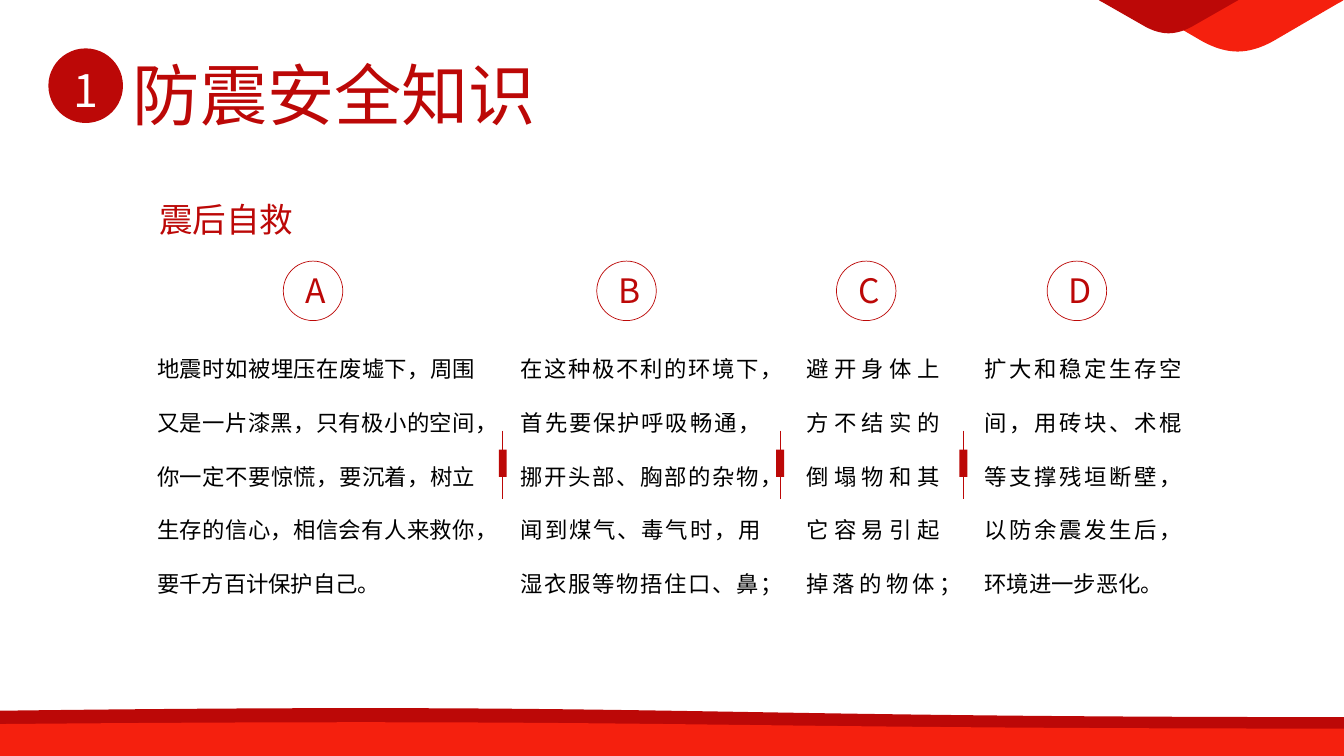
import pptx
import pptx.util
import pptx.dml.color
import pptx.enum.shapes
import pptx.enum.text
import pptx.oxml.ns
from lxml import etree

Cm = pptx.util.Cm
SHAPE = pptx.enum.shapes.MSO_SHAPE
ALIGN = pptx.enum.text.PP_ALIGN

# Content, lengths in cm
DARK_RED, BRIGHT_RED, BLACK, WHITE = "BC0807", "F5200E", "000000", "FFFFFF"
TITLE_FONT, LABEL_FONT = "Noto Sans CJK JP", "Noto Sans CJK SC"
NUMBER, TITLE, SUBTITLE = "1", "防震安全知识", "震后自救"
COLUMNS = [  # letter, ring left, text left, text width, text
    ("A", 7.14, 3.71, 8.53, "地震时如被埋压在废墟下，周围又是一片漆黑，只有极小的空间，"
     "你一定不要惊慌，要沉着，树立生存的信心，相信会有人来救你，要千方百计保护自己。"),
    ("B", 15.04, 12.88, 6.55, "在这种极不利的环境下，首先要保护呼吸畅通，挪开头部、胸部的杂物，"
     "闻到煤气、毒气时，用湿衣服等物捂住口、鼻；"),
    ("C", 21.08, 20.07, 3.86, "避开身体上方不结实的倒塌物和其它容易引起掉落的物体；"),
    ("D", 26.39, 24.56, 5.49, "扩大和稳定生存空间，用砖块、术棍等支撑残垣断壁，"
     "以防余震发生后，环境进一步恶化。"),
]
DIVIDERS = [12.67, 19.66, 24.28]
DIVIDER_TOP, DIVIDER_BOTTOM = 10.85, 12.57
BLOCK_TOP, BLOCK_WIDTH, BLOCK_HEIGHT = 11.33, 0.2, 0.69
RING_TOP, RING_SIZE = 6.58, 1.5
SLIDE_WIDTH, SLIDE_HEIGHT = 33.87, 19.05
BANDS = [(17.83, DARK_RED), (18.19, BRIGHT_RED)]  # top, colour
WEDGES = [(28.52, 5.34, 1.3, BRIGHT_RED), (27.69, 3.52, 0.84, DARK_RED)]
# Right half of a wedge as cubic curves, in fractions of its width and height
WEDGE_CURVES = [
    [(0.5, 1), (0.557, 1), (0.614, 0.92), (0.667, 0.8)],
    [(0.976, 0.06), (0.986, 0.04), (0.995, 0.02), (1, 0)],
]
CURVE_STEPS = 12


def colour(hex_string):
    return pptx.dml.color.RGBColor.from_string(hex_string)


def style(shape, fill=None, line=None):
    shape.shadow.inherit = False
    if fill:
        shape.fill.solid()
        shape.fill.fore_color.rgb = colour(fill)
    else:
        shape.fill.background()
    if line:
        shape.line.color.rgb = colour(line)
        shape.line.width = pptx.util.Pt(0.5)
    else:
        shape.line.fill.background()


def add_shape(shapes, kind, box, fill=None, line=None):
    shape = shapes.add_shape(kind, *(Cm(value) for value in box))
    style(shape, fill, line)
    return shape


def write(shape, text, size, font, hex_string, align=ALIGN.JUSTIFY, spacing=None):
    frame = shape.text_frame
    frame.word_wrap = True
    frame.text = text
    paragraph = frame.paragraphs[0]
    paragraph.alignment = align
    if spacing:
        paragraph.line_spacing = spacing
    run = paragraph.runs[0]
    run.font.size = pptx.util.Pt(size)
    run.font.color.rgb = colour(hex_string)
    run.font.name = font
    properties = run._r.get_or_add_rPr()
    properties.set("lang", "zh-CN")
    etree.SubElement(properties, pptx.oxml.ns.qn("a:ea"), typeface=font)


def add_text(shapes, box, *args, **options):
    write(shapes.add_textbox(*(Cm(value) for value in box)), *args, **options)


def add_wedge(shapes, left, width, height, fill):
    right_half = []
    for a, b, c, d in WEDGE_CURVES:
        for step in range(CURVE_STEPS + 1):
            t = step / CURVE_STEPS
            weights = ((1 - t) ** 3, 3 * t * (1 - t) ** 2, 3 * t * t * (1 - t), t ** 3)
            right_half.append(tuple(sum(w * p[axis] for w, p in zip(weights, (a, b, c, d)))
                                    for axis in (0, 1)))
    left_half = [(1 - x, y) for x, y in reversed(right_half)]
    points = [(Cm(left + x * width), Cm(y * height)) for x, y in right_half + left_half]
    builder = shapes.build_freeform(*points[0], scale=1.0)
    builder.add_line_segments(points[1:], close=True)
    style(builder.convert_to_shape(), fill)


def main():
    presentation = pptx.Presentation()
    presentation.slide_width = Cm(SLIDE_WIDTH)
    presentation.slide_height = Cm(SLIDE_HEIGHT)
    slide = presentation.slides.add_slide(presentation.slide_layouts[6])
    shapes = slide.shapes

    # Bottom waves and corner wedges
    for top, fill in BANDS:
        band = add_shape(shapes, SHAPE.FLOWCHART_DOCUMENT,
                         (0, top, SLIDE_WIDTH, SLIDE_HEIGHT - top), fill)
        band._element.spPr.get_or_add_xfrm().set("flipV", "1")
    for wedge in WEDGES:
        add_wedge(shapes, *wedge)

    # Title with its number, and subtitle
    add_text(shapes, (3.1, 1.22, 11.15, 2.31), TITLE, 48, TITLE_FONT, DARK_RED)
    badge = add_shape(shapes, SHAPE.OVAL, (1.22, 1.22, 1.88, 1.88), DARK_RED)
    badge.text_frame.margin_top = Cm(0.3)
    badge.text_frame.vertical_anchor = pptx.enum.text.MSO_ANCHOR.MIDDLE
    write(badge, NUMBER, 32, TITLE_FONT, WHITE, ALIGN.CENTER)
    add_text(shapes, (3.76, 4.88, 8.56, 1.14), SUBTITLE, 24, LABEL_FONT, DARK_RED)

    # Columns: text under a ringed letter
    for letter, ring_left, text_left, text_width, text in COLUMNS:
        add_text(shapes, (text_left, 8.15, text_width, 7.09), text, 16, TITLE_FONT,
                 BLACK, spacing=2.0)
        label = shapes.add_group_shape().shapes
        add_text(label, (ring_left + 0.3, RING_TOP + 0.1, 0.94, 1.27), letter, 24,
                 LABEL_FONT, DARK_RED, ALIGN.CENTER)
        add_shape(label, SHAPE.OVAL, (ring_left, RING_TOP, RING_SIZE, RING_SIZE),
                  line=DARK_RED)

    # Dividers between the columns
    for x in DIVIDERS:
        line = shapes.add_connector(pptx.enum.shapes.MSO_CONNECTOR.STRAIGHT, Cm(x),
                                    Cm(DIVIDER_TOP), Cm(x), Cm(DIVIDER_BOTTOM))
        line.line.color.rgb = colour(DARK_RED)
        line.line.width = pptx.util.Pt(0.5)
        etree.SubElement(line._element.spPr, pptx.oxml.ns.qn("a:effectLst"))
        add_shape(shapes, SHAPE.RECTANGLE,
                  (x - BLOCK_WIDTH / 2, BLOCK_TOP, BLOCK_WIDTH, BLOCK_HEIGHT), DARK_RED)

    presentation.save("out.pptx")


if __name__ == "__main__":
    main()
